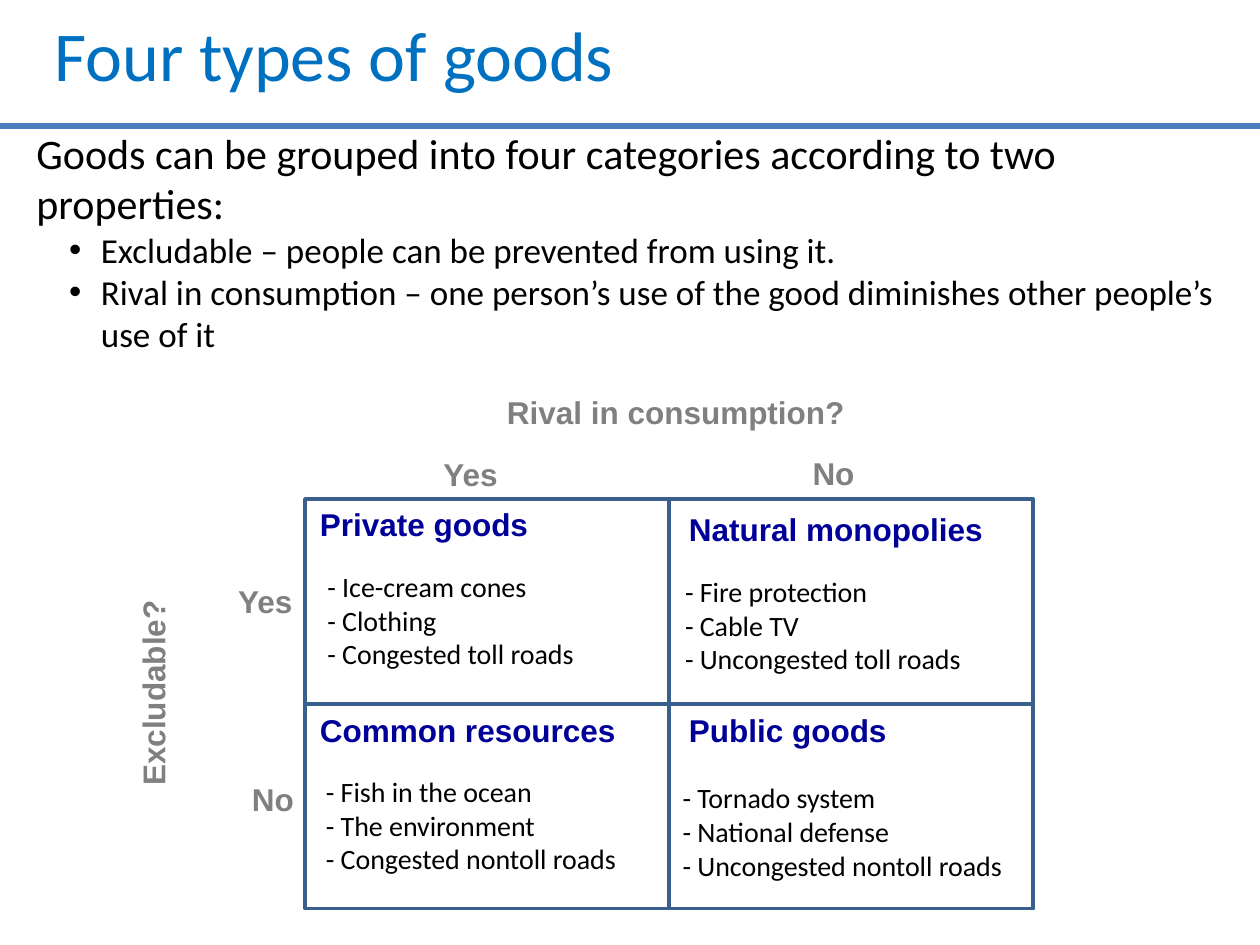
import pptx
import pptx.dml.color
import pptx.enum.shapes
import pptx.enum.text
import pptx.oxml
import pptx.oxml.ns
import pptx.util

Cm = pptx.util.Cm
Pt = pptx.util.Pt
COLORS = {
    "title": "0070C0",
    "rule": "4B7EBC",
    "text": "000000",
    "heading": "000099",
    "label": "808080",
    "cell": "3A5F8C",
}
LABEL_HEIGHT = 1.02
GRID_LEFT, GRID_TOP = 6.15, 10.06
CELL_WIDTH, CELL_HEIGHT = 7.34, 4.13

# Row, column, heading, heading box (left, top, width), list box, examples
GOODS = [
    (0, 0, "Private goods", (6.2, 10.06, 4.75), (6.35, 11.36, 6.83),
     ["Ice-cream cones", "Clothing", "Congested toll roads"]),
    (0, 1, "Natural monopolies", (13.64, 10.16, 6.5), (13.56, 11.46, 7.19),
     ["Fire protection", "Cable TV", "Uncongested toll roads"]),
    (1, 0, "Common resources", (6.2, 14.2, 6.53), (6.32, 15.49, 7.29),
     ["Fish in the ocean", "The environment", "Congested nontoll roads"]),
    (1, 1, "Public goods", (13.64, 14.2, 4.55), (13.51, 15.62, 7.24),
     ["Tornado system", "National defense", "Uncongested nontoll roads"]),
]
AXIS_LABELS = [
    ("Excludable?", (0.94, 13.46, 4.29), 270),
    ("Yes", (4.55, 11.61, 1.63), 0),
    ("No", (4.83, 15.6, 1.37), 0),
    ("Rival in consumption?", (9.93, 7.8, 7.39), 0),
    ("Yes", (8.69, 9.04, 1.63), 0),
    ("No", (16.13, 9.02, 1.37), 0),
]


def rgb(name):
    return pptx.dml.color.RGBColor.from_string(COLORS[name])


class SlideBuilder:
    """Holds the fonts and the slide that elements are added to."""

    body_font = "Calibri"
    label_font = "Arial"

    def __init__(self, slide):
        self.slide = slide

    def add_run(self, paragraph, text, size, color, font=None, bold=False):
        run = paragraph.add_run()
        run.text = text
        run.font.name = font or self.body_font
        run.font.size = Pt(size)
        run.font.bold = bold
        run.font.color.rgb = rgb(color)

    def place(self, shape, left, top, width, height):
        shape.left, shape.top = Cm(left), Cm(top)
        shape.width, shape.height = Cm(width), Cm(height)
        frame = shape.text_frame
        frame.word_wrap = True
        frame.auto_size = pptx.enum.text.MSO_AUTO_SIZE.NONE
        frame.vertical_anchor = pptx.enum.text.MSO_ANCHOR.TOP
        return frame

    def title(self, text):
        frame = self.place(self.slide.shapes.title, 0.84, 0.03, 24.56, 1.47)
        frame.margin_top = Cm(0.2)
        paragraph = frame.paragraphs[0]
        paragraph.alignment = pptx.enum.text.PP_ALIGN.LEFT
        self.add_run(paragraph, text, 40, "title")

    def body(self, introduction, points):
        frame = self.place(self.slide.placeholders[1], 0.48, 2.44, 24.41, 4.88)
        for index, text in enumerate([introduction, *points]):
            paragraph = frame.add_paragraph() if index else frame.paragraphs[0]
            paragraph.space_before = Pt(0)
            self.add_run(paragraph, text, 20 if index else 24, "text")
            self.set_bullet(paragraph, bool(index))

    def set_bullet(self, paragraph, shown):
        properties = paragraph._p.get_or_add_pPr()
        properties.set("marL", str(Cm(1.3) if shown else 0))
        properties.set("indent", str(Cm(-0.64) if shown else 0))
        tag = 'buChar char="•"' if shown else "buNone"
        namespace = pptx.oxml.ns.nsdecls("a")
        if shown:
            properties.append(pptx.oxml.parse_xml(f'<a:buFont {namespace} typeface="Arial"/>'))
        properties.append(pptx.oxml.parse_xml(f"<a:{tag.replace(' ', f' {namespace} ', 1)}/>"
                                              if shown else f"<a:{tag} {namespace}/>"))

    def rule(self, top):
        line = self.slide.shapes.add_connector(
            pptx.enum.shapes.MSO_CONNECTOR.STRAIGHT, 0, Cm(top), Cm(25.4), Cm(top))
        line.line.color.rgb = rgb("rule")
        line.line.width = Pt(3)
        line._element.spPr.append(pptx.oxml.parse_xml(
            f"<a:effectLst {pptx.oxml.ns.nsdecls('a')}/>"))

    def cell(self, row, column):
        shape = self.slide.shapes.add_shape(
            pptx.enum.shapes.MSO_SHAPE.RECTANGLE,
            Cm(GRID_LEFT + column * CELL_WIDTH), Cm(GRID_TOP + row * CELL_HEIGHT),
            Cm(CELL_WIDTH), Cm(CELL_HEIGHT))
        shape.shadow.inherit = False
        shape.fill.background()
        shape.line.color.rgb = rgb("cell")
        shape.line.width = Pt(2)

    def label(self, text, box, color, rotation=0, centered=False):
        left, top, width = box
        shape = self.slide.shapes.add_textbox(Cm(left), Cm(top), Cm(width), Cm(LABEL_HEIGHT))
        shape.rotation = rotation
        frame = shape.text_frame
        frame.word_wrap = False
        frame.auto_size = pptx.enum.text.MSO_AUTO_SIZE.SHAPE_TO_FIT_TEXT
        paragraph = frame.paragraphs[0]
        if centered:
            paragraph.alignment = pptx.enum.text.PP_ALIGN.CENTER
        self.add_run(paragraph, text, 18, color, self.label_font, bold=True)

    def examples(self, items, box):
        left, top, width = box
        shape = self.slide.shapes.add_textbox(Cm(left), Cm(top), Cm(width), Cm(2.31))
        frame = shape.text_frame
        frame.word_wrap = True
        frame.auto_size = pptx.enum.text.MSO_AUTO_SIZE.SHAPE_TO_FIT_TEXT
        for index, item in enumerate(items):
            paragraph = frame.add_paragraph() if index else frame.paragraphs[0]
            self.add_run(paragraph, f"- {item}", 16, "text")


def main():
    presentation = pptx.Presentation()
    presentation.slide_width, presentation.slide_height = Cm(25.4), Cm(19.05)
    builder = SlideBuilder(presentation.slides.add_slide(presentation.slide_layouts[1]))
    builder.rule(2.54)
    builder.title("Four types of goods")
    builder.body(
        "Goods can be grouped into four categories according to two properties:",
        ["Excludable – people can be prevented from using it.",
         "Rival in consumption – one person’s use of the good diminishes "
         "other people’s use of it"])
    for row, column, heading, heading_box, list_box, items in GOODS:
        builder.cell(row, column)
        builder.label(heading, heading_box, "heading")
        builder.examples(items, list_box)
    for text, box, rotation in AXIS_LABELS:
        builder.label(text, box, "label", rotation, centered=text.endswith("?"))
    presentation.save("out.pptx")


if __name__ == "__main__":
    main()
